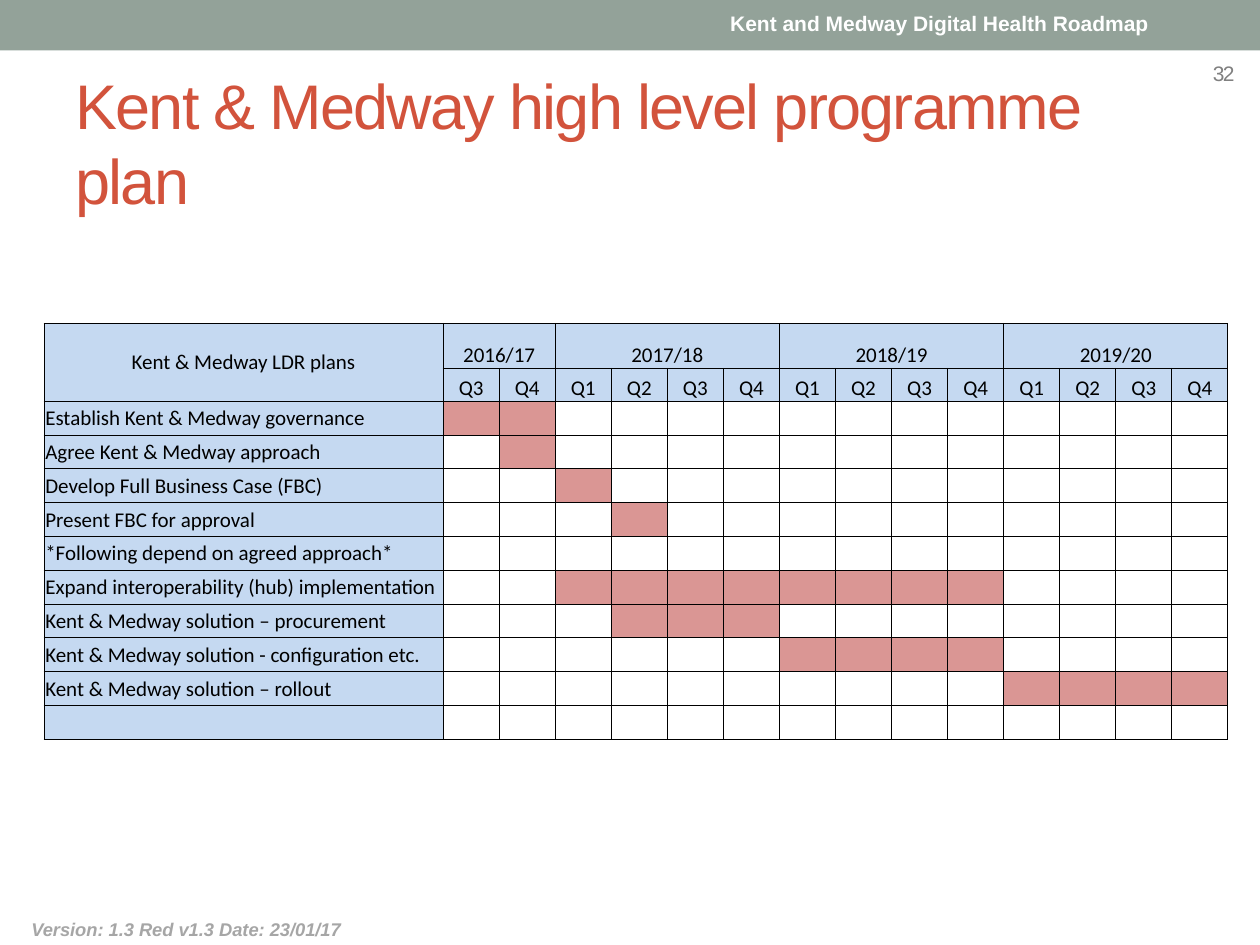
"""Build the Kent & Medway high level programme plan slide."""
import pptx
import pptx.util
import pptx.dml.color
import pptx.enum.shapes
import pptx.enum.text
import pptx.oxml
import pptx.oxml.ns

Pt = pptx.util.Pt
ANCHOR = pptx.enum.text.MSO_ANCHOR
ALIGN = pptx.enum.text.PP_ALIGN
HEAD, BAR, WHITE = "C5D9F1", "DA9694", "FFFFFF"


def paint(fill, color):
    fill.solid()
    fill.fore_color.rgb = pptx.dml.color.RGBColor.from_string(color)


def write(tf, text, size=12, color="000000", font="Arial", bold=False,
          italic=False, align=ALIGN.LEFT, spacing=None):
    p = tf.paragraphs[0]
    p.alignment = align
    r = p.add_run()
    r.text = text
    r.font.size = Pt(size)
    r.font.name = font
    r.font.bold = bold
    r.font.italic = italic
    paint(r.font.fill, color)
    if spacing:
        r.font._element.set("spc", str(spacing * 100))


prs = pptx.Presentation()
prs.slide_width, prs.slide_height = Pt(720), Pt(540)
s = prs.slides.add_slide(prs.slide_layouts[6])

sp = s.shapes.add_shape(pptx.enum.shapes.MSO_SHAPE.RECTANGLE, 0, 0, Pt(720), Pt(28.8))
sp.shadow.inherit = False
sp.line.fill.background()
paint(sp.fill, "93A299")

texts = [
    ((10.8, 521.3, 224.6, 20.2), "Version: 1.3 Red v1.3 Date: 23/01/17", True, ANCHOR.TOP,
     dict(size=10.5, color="A6A6A6", bold=True, italic=True)),
    ((410.2, 2.4, 256.3, 21.6), "Kent and Medway Digital Health Roadmap", False, ANCHOR.TOP,
     dict(color=WHITE, bold=True)),
    ((36, 42, 648, 78), "Kent & Medway high level programme plan", True, ANCHOR.MIDDLE,
     dict(size=36, color="D2533C", spacing=-1)),
    ((686, 28.8, 34, 26), "32", True, ANCHOR.MIDDLE, dict(color="808080", spacing=-1)),
]
for box, text, wrap, anchor, style in texts:
    tf = s.shapes.add_textbox(*map(Pt, box)).text_frame
    tf.word_wrap = wrap
    tf.vertical_anchor = anchor
    write(tf, text, **style)

years = [("2016/17", ["Q3", "Q4"])]
years += [(year, ["Q1", "Q2", "Q3", "Q4"]) for year in ("2017/18", "2018/19", "2019/20")]
tasks = [
    ("Establish Kent & Medway governance", 1, 2),
    ("Agree Kent & Medway approach", 2, 2),
    ("Develop Full Business Case (FBC)", 3, 3),
    ("Present FBC for approval", 4, 4),
    ("*Following depend on agreed approach*", 0, 0),
    ("Expand interoperability (hub) implementation", 3, 10),
    ("Kent & Medway solution – procurement", 4, 6),
    ("Kent & Medway solution - configuration etc.", 7, 10),
    ("Kent & Medway solution – rollout", 11, 14),
    ("", 0, 0),
]

labels = {(0, 0): "Kent & Medway LDR plans"}
spans = [(0, 0, 1, 0)]
col = 1
for year, quarters in years:
    labels[0, col] = year
    spans.append((0, col, 0, col + len(quarters) - 1))
    for quarter in quarters:
        labels[1, col] = quarter
        col += 1
for row, (task, first, last) in enumerate(tasks, 2):
    labels[row, 0] = task

heights = [25.7, 18.9] + [19.33] * len(tasks)
widths = [228] + [32.04] * (col - 1)
table = s.shapes.add_table(len(heights), len(widths), Pt(25.2), Pt(184.7),
                           Pt(sum(widths)), Pt(sum(heights))).table
table.first_row = table.horz_banding = False
for row, height in zip(table.rows, heights):
    row.height = Pt(height)
for column, width in zip(table.columns, widths):
    column.width = Pt(width)

for row in range(len(heights)):
    for col in range(len(widths)):
        cell = table.cell(row, col)
        cell.margin_left = cell.margin_right = cell.margin_top = Pt(0.7)
        cell.margin_bottom = 0
        header = row < 2
        cell.vertical_anchor = ANCHOR.BOTTOM if header and col else ANCHOR.MIDDLE
        for side in ("lnL", "lnR", "lnT", "lnB"):
            cell._tc.get_or_add_tcPr().append(pptx.oxml.parse_xml(
                f'<a:{side} {pptx.oxml.ns.nsdecls("a")} w="6350"><a:solidFill>'
                f'<a:srgbClr val="000000"/></a:solidFill></a:{side}>'))
        if header or col == 0:
            color = HEAD
        else:
            task, first, last = tasks[row - 2]
            color = BAR if first <= col <= last else WHITE
        paint(cell.fill, color)
        text = labels.get((row, col))
        if text:
            write(cell.text_frame, text, font="Calibri",
                  align=ALIGN.CENTER if header else ALIGN.LEFT)
        else:
            cell.text_frame.paragraphs[0]._p.append(pptx.oxml.parse_xml(
                f'<a:endParaRPr {pptx.oxml.ns.nsdecls("a")} sz="1200"/>'))

for top, left, bottom, right in spans:
    table.cell(top, left).merge(table.cell(bottom, right))

prs.save("out.pptx")
